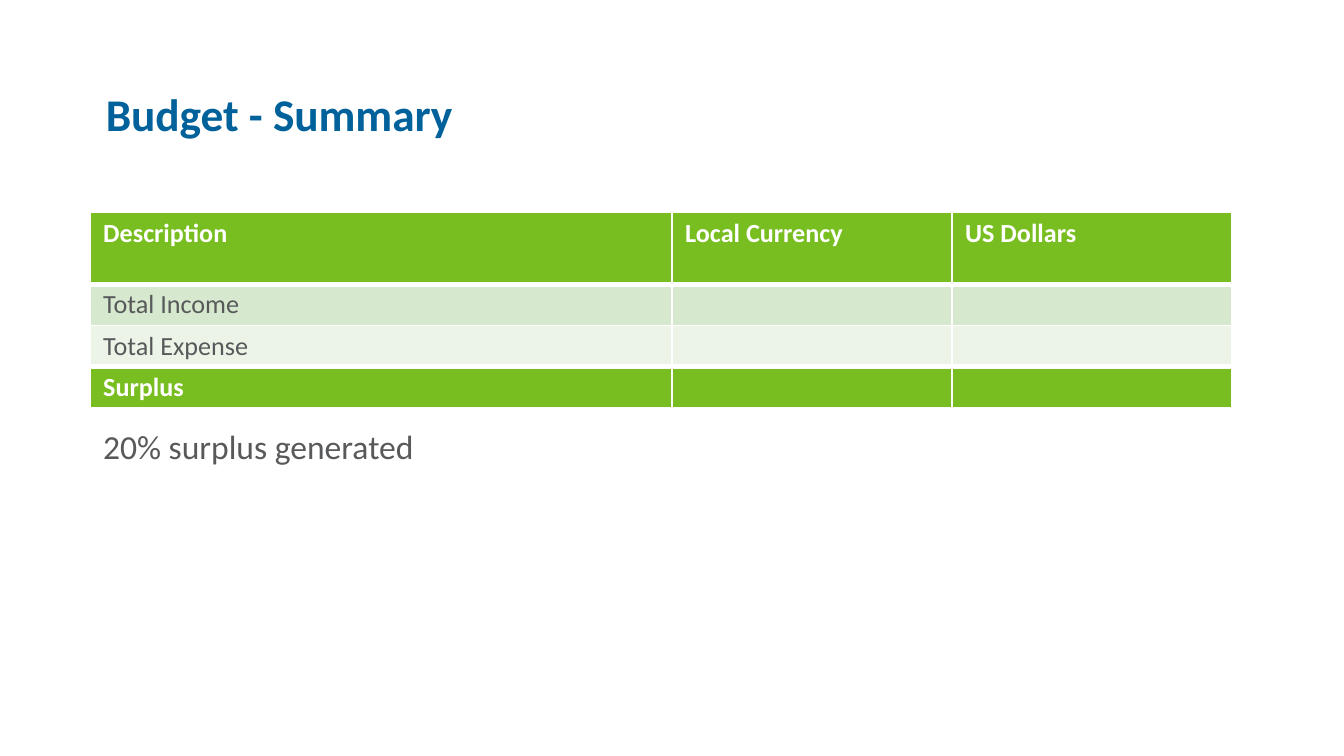
from dataclasses import dataclass

from lxml.etree import SubElement
from pptx import Presentation
from pptx.dml.color import RGBColor
from pptx.enum.text import MSO_ANCHOR
from pptx.oxml.ns import qn
from pptx.slide import Slide
from pptx.table import _Cell
from pptx.text.text import _Paragraph
from pptx.util import Cm, Pt

COLORS = {
    "title": "00619B",
    "text": "58595B",
    "white": "FFFFFF",
    "green": "78BE20",
    "band_dark": "D6E8CD",
    "band_light": "ECF4E8",
}
FONT_NAME = "Calibri"
TABLE_TEXT_SIZE = 14
COLUMN_WIDTHS = (11, 5.29, 5.29)
CELL_MARGINS = {
    "margin_left": Cm(0.25),
    "margin_right": Cm(0.25),
    "margin_top": Cm(0.09),
    "margin_bottom": Cm(0.09),
}


@dataclass
class TextLine:
    text: str
    left: float
    top: float
    width: float
    height: float
    size: float
    color: str
    bold: bool = False
    line_spacing: float = 1.0


@dataclass
class BudgetRow:
    labels: tuple[str, ...]
    height: float
    fill: str
    color: str
    bold: bool = False
    top_border: float = 1
    bottom_border: float = 1


TEXT_LINES = (
    TextLine("Budget - Summary", 1.75, 1.63, 12.4, 1.17, 24.3, "title", True, 0.9),
    TextLine("20% surplus generated", 1.7, 7.92, 21.16, 1.02, 18, "text"),
)
BUDGET_ROWS = (
    BudgetRow(("Description", "Local Currency", "US Dollars"), 1.35,
              "green", "white", True, bottom_border=3),
    BudgetRow(("Total Income", "", ""), 0.78, "band_dark", "text", top_border=3),
    BudgetRow(("Total Expense", "", ""), 0.78, "band_light", "text", bottom_border=3),
    BudgetRow(("Surplus", "", ""), 0.78, "green", "white", True, top_border=3),
)


def rgb(color: str) -> RGBColor:
    return RGBColor.from_string(COLORS[color])


def write_text(paragraph: _Paragraph, text: str, size: float, color: str, bold: bool) -> None:
    run = paragraph.add_run()
    run.text = text
    font_format = {"name": FONT_NAME, "size": Pt(size), "bold": bold}
    for attribute, value in font_format.items():
        setattr(run.font, attribute, value)
    run.font.color.rgb = rgb(color)


def add_text_line(slide: Slide, line: TextLine) -> None:
    box = slide.shapes.add_textbox(
        Cm(line.left), Cm(line.top), Cm(line.width), Cm(line.height))
    frame = box.text_frame
    frame.word_wrap = True
    frame.vertical_anchor = MSO_ANCHOR.MIDDLE
    paragraph = frame.paragraphs[0]
    paragraph.line_spacing = line.line_spacing
    write_text(paragraph, line.text, line.size, line.color, line.bold)


def add_cell_borders(cell: _Cell, row: BudgetRow) -> None:
    """Must run before the fill is set, since borders precede it in the XML."""
    properties = cell._tc.get_or_add_tcPr()
    widths = {"lnL": 1, "lnR": 1, "lnT": row.top_border, "lnB": row.bottom_border}
    for tag, width in widths.items():
        border = SubElement(properties, qn(f"a:{tag}"), w=str(Pt(width)))
        fill = SubElement(border, qn("a:solidFill"))
        SubElement(fill, qn("a:srgbClr"), val=COLORS["white"])


def fill_cell(cell: _Cell, label: str, row: BudgetRow) -> None:
    add_cell_borders(cell, row)
    for attribute, value in CELL_MARGINS.items():
        setattr(cell, attribute, value)
    cell.fill.solid()
    cell.fill.fore_color.rgb = rgb(row.fill)
    paragraph = cell.text_frame.paragraphs[0]
    if label:
        write_text(paragraph, label, TABLE_TEXT_SIZE, row.color, row.bold)
    else:
        # Keeps an empty cell from growing its row.
        SubElement(paragraph._p, qn("a:endParaRPr"), sz=str(TABLE_TEXT_SIZE * 100))


def add_budget_table(slide: Slide) -> None:
    table = slide.shapes.add_table(
        len(BUDGET_ROWS), len(COLUMN_WIDTHS), Cm(1.7), Cm(4.02),
        Cm(sum(COLUMN_WIDTHS)), Cm(sum(row.height for row in BUDGET_ROWS))).table
    for column, width in zip(table.columns, COLUMN_WIDTHS):
        column.width = Cm(width)
    for table_row, row in zip(table.rows, BUDGET_ROWS):
        table_row.height = Cm(row.height)
        for cell, label in zip(table_row.cells, row.labels):
            fill_cell(cell, label, row)


def main() -> None:
    presentation = Presentation()
    presentation.slide_width = Cm(25.4)
    presentation.slide_height = Cm(14.29)
    slide = presentation.slides.add_slide(presentation.slide_layouts[6])
    add_budget_table(slide)
    for line in TEXT_LINES:
        add_text_line(slide, line)
    presentation.save("out.pptx")


if __name__ == "__main__":
    main()
